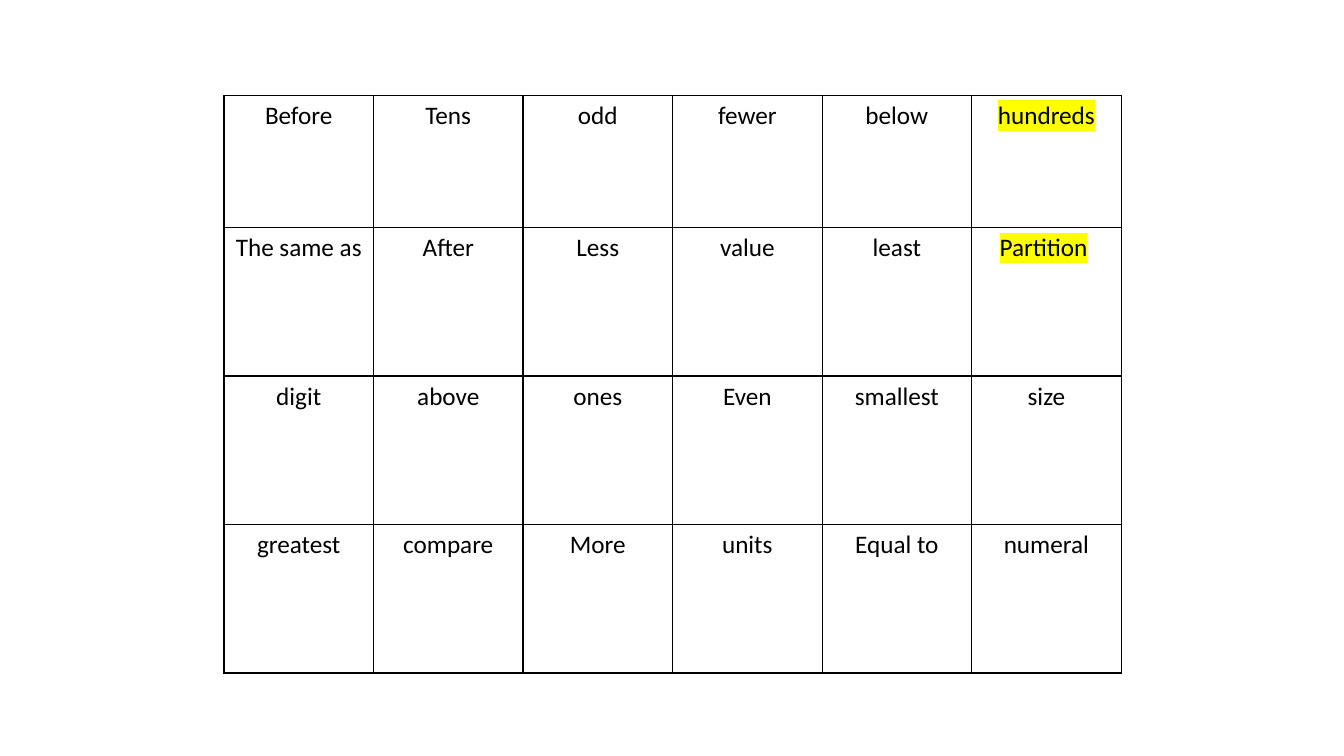
from lxml import etree
from pptx import Presentation
from pptx.dml.color import RGBColor
from pptx.enum.text import PP_ALIGN
from pptx.oxml.ns import qn
from pptx.util import Pt

CENTER = PP_ALIGN.CENTER
BLACK = RGBColor(0x00, 0x00, 0x00)
WHITE = RGBColor(0xFF, 0xFF, 0xFF)
YELLOW = RGBColor(0xFF, 0xFF, 0x00)
FONT = "Calibri"
BLANK_LAYOUT = 6

WORDS = [
    ["Before", "Tens", "odd", "fewer", "below", "hundreds"],
    ["The same as", "After", "Less", "value", "least", "Partition "],
    ["digit", "above", "ones", "Even", "smallest", "size"],
    ["greatest", "compare", "More", "units", "Equal to", "numeral"],
]
HIGHLIGHTED = {"hundreds", "Partition"}
ROW_HEIGHTS = [94.5, 106.1, 106.1, 106.1]


def add_color(parent, tag, color):
    """Append an element that holds one RGB colour."""
    holder = etree.SubElement(parent, qn(tag))
    etree.SubElement(holder, qn("a:srgbClr"), val=str(color))
    return holder


def set_borders(cell, color, width):
    """Draw a solid line on all four sides of a cell."""
    tcPr = cell._tc.get_or_add_tcPr()
    for i, side in enumerate(("a:lnL", "a:lnR", "a:lnT", "a:lnB")):
        ln = etree.Element(qn(side), w=str(Pt(width)))
        add_color(ln, "a:solidFill", color)
        tcPr.insert(i, ln)


def add_run(p, text, highlighted):
    """Add a word in the table font, marked yellow if highlighted."""
    r = p.add_run()
    r.text = text
    r.font.size = Pt(18)
    r.font.color.rgb = BLACK
    if highlighted:
        add_color(r.font._element, "a:highlight", YELLOW)
    r.font.name = FONT


def fill_cell(cell, text):
    """Write one vocabulary word into a bordered white cell."""
    cell.fill.solid()
    cell.fill.fore_color.rgb = WHITE
    set_borders(cell, BLACK, 1)
    p = cell.text_frame.paragraphs[0]
    p.alignment = CENTER
    word = text.rstrip()
    add_run(p, word, word in HIGHLIGHTED)
    if word != text:
        add_run(p, text[len(word):], False)


def add_word_grid(s, left, top, width):
    """Add the vocabulary table with equal columns."""
    frame = s.shapes.add_table(len(WORDS), len(WORDS[0]), Pt(left), Pt(top),
                               Pt(width), Pt(sum(ROW_HEIGHTS)))
    table = frame.table
    table.first_row = False
    table.horz_banding = False
    for row, height, words in zip(table.rows, ROW_HEIGHTS, WORDS):
        row.height = Pt(height)
        for cell, word in zip(row.cells, words):
            fill_cell(cell, word)


def main():
    """Build the vocabulary slide."""
    prs = Presentation()
    prs.slide_width, prs.slide_height = Pt(960), Pt(540)
    s = prs.slides.add_slide(prs.slide_layouts[BLANK_LAYOUT])
    add_word_grid(s, 160, 68, 641)
    prs.save("out.pptx")


if __name__ == "__main__":
    main()
